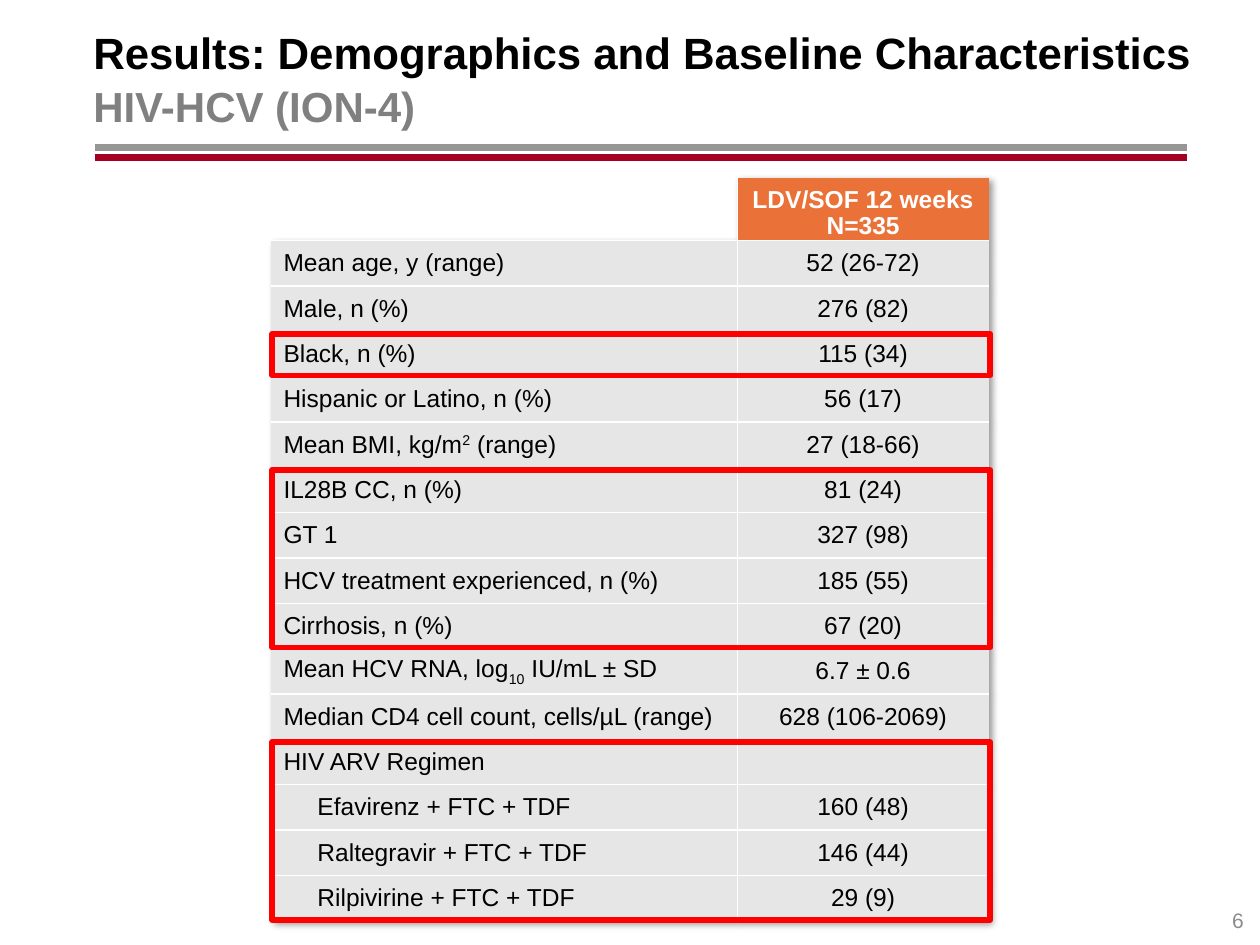
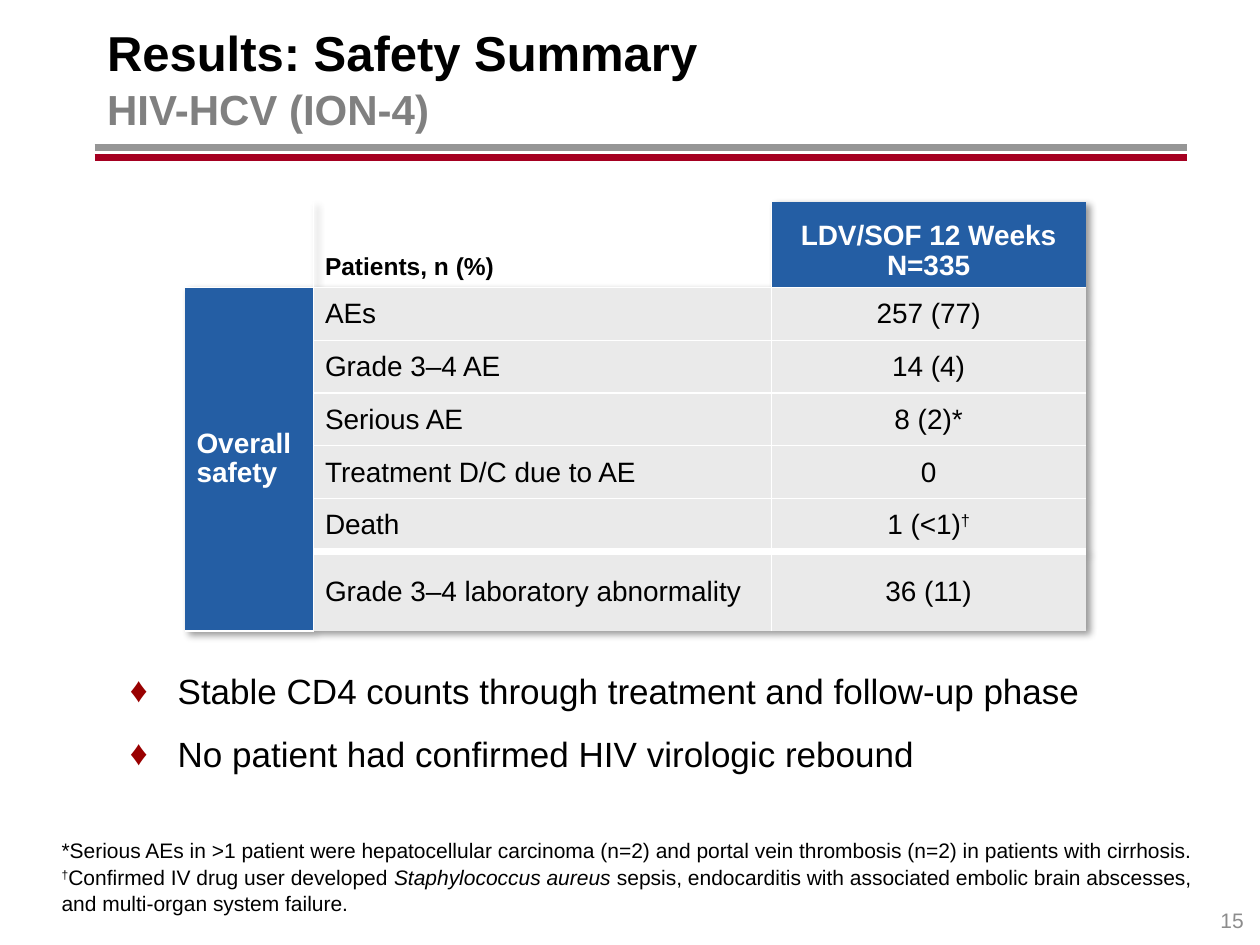
from dataclasses import dataclass

from lxml import etree
from pptx import Presentation
from pptx.dml.color import RGBColor
from pptx.enum.shapes import MSO_CONNECTOR as CONN, MSO_SHAPE as SHAPE
from pptx.enum.text import MSO_ANCHOR as ANCHOR, MSO_AUTO_SIZE as AUTO, PP_ALIGN as ALIGN
from pptx.oxml.ns import qn
from pptx.util import Inches, Pt


@dataclass(frozen=True)
class Theme:
    font: str = "Arial"
    black: str = "000000"
    white: str = "FFFFFF"
    subtitle: str = "808080"
    number: str = "8C8C8C"
    band_gray: str = "969696"
    band_red: str = "A50021"
    bullet: str = "990000"
    highlight: str = "FF0000"
    orange: str = "EA7137"
    blue: str = "245EA4"
    row_gray: str = "E6E6E6"
    row_light: str = "EAEAEA"
    subtitle_size: float = 24
    bullet_size: float = 20
    safety_size: float = 16
    cell_size: float = 14
    note_size: float = 12
    band_width: float = 4.25
    box_width: float = 3.25
    grid_width: float = 0.75
    divider_width: float = 4.5


T = Theme()
NO_GRID_STYLE = "{2D5ABB26-0587-4C30-8999-92F81FD0307C}"
SUBTITLE = "HIV-HCV (ION-4)"
# Text marks: "|" splits runs; a leading ^ raises, _ lowers, ~ slants the run.
BASELINES = {"^": "30000", "_": "-25000"}

DEMOGRAPHICS = [
    ("Mean age, y (range)", "52 (26-72)"),
    ("Male, n (%)", "276 (82)"),
    ("Black, n (%)", "115 (34)"),
    ("Hispanic or Latino, n (%)", "56 (17)"),
    ("Mean BMI, kg/m|^2| (range)", "27 (18-66)"),
    ("IL28B CC, n (%)", "81 (24)"),
    ("GT 1", "327 (98)"),
    ("HCV treatment experienced, n (%)", "185 (55)"),
    ("Cirrhosis, n (%)", "67 (20)"),
    ("Mean HCV RNA, log|_10| IU/mL ± SD", "6.7 ± 0.6"),
    ("Median CD4 cell count, cells/µL (range)", "628 (106-2069)"),
    ("HIV ARV Regimen", ""),
    ("Efavirenz + FTC + TDF", "160 (48)"),
    ("Raltegravir + FTC + TDF", "146 (44)"),
    ("Rilpivirine + FTC + TDF", "29 (9)"),
]
REGIMEN_ROWS = (13, 14, 15)
HIGHLIGHTED_ROWS = [(3, 3), (6, 9), (12, 15)]

SAFETY = [
    ("AEs", "257 (77)"),
    ("Grade 3‒4 AE", "14 (4)"),
    ("Serious AE", "8 (2)*"),
    ("Treatment D/C due to AE", "0"),
    ("Death", "1 (<1)|^†"),
    ("Grade 3‒4 laboratory abnormality", "36 (11)"),
]
FINDINGS = [
    "Stable CD4 counts through treatment and follow-up phase",
    "No patient had confirmed HIV virologic rebound",
]
FOOTNOTES = [
    "*Serious AEs in >1 patient were hepatocellular carcinoma (n=2) and portal "
    "vein thrombosis (n=2) in patients with cirrhosis.",
    "^†|Confirmed IV drug user developed |~Staphylococcus aureus| sepsis, endocarditis "
    "with associated embolic brain abscesses, and multi-organ system failure.",
]


# Text helpers
def rgb(color):
    return RGBColor.from_string(color)


def style_run(r, size, color, bold=False):
    r.font.name = T.font
    r.font.size = Pt(size)
    r.font.bold = bold
    r.font.color.rgb = rgb(color)


def write(tf, lines, size, color=T.black, bold=False, align=ALIGN.LEFT, spacing=None):
    for i, line in enumerate(lines):
        p = tf.add_paragraph() if i else tf.paragraphs[0]
        p.alignment = align
        p.line_spacing = spacing
        for part in line.split("|"):
            mark = part[:1]
            r = p.add_run()
            r.text = part[1:] if mark and mark in "^_~" else part
            style_run(r, size, color, bold)
            if mark in BASELINES:
                r.font._element.set("baseline", BASELINES[mark])
            elif mark == "~":
                r.font.italic = True


def place(sp, box):
    sp.left, sp.top, sp.width, sp.height = (Inches(v) for v in box)


def add_text(slide, box, anchor):
    tf = slide.shapes.add_textbox(*(Inches(v) for v in box)).text_frame
    tf.word_wrap = True
    tf.vertical_anchor = anchor
    return tf


# Table helpers
def set_borders(cell, widths):
    """Draw white borders; widths maps L, R, T, B to points."""
    tcPr = cell._tc.get_or_add_tcPr()
    sides = [side for side in "LRTB" if side in widths]
    for i, side in enumerate(sides):
        ln = etree.Element(qn(f"a:ln{side}"), w=str(Pt(widths[side])))
        fill = etree.SubElement(ln, qn("a:solidFill"))
        etree.SubElement(fill, qn("a:srgbClr"), val=T.white)
        tcPr.insert(i, ln)


def add_shadow(tblPr):
    effects = etree.Element(qn("a:effectLst"))
    shadow = etree.SubElement(effects, qn("a:outerShdw"), blurRad=str(Pt(4)),
                              dist=str(Pt(3)), dir="2700000", algn="tl", rotWithShape="0")
    color = etree.SubElement(shadow, qn("a:prstClr"), val="black")
    etree.SubElement(color, qn("a:alpha"), val="40000")
    tblPr.insert(0, effects)


def add_grid(slide, left, top, cols, rows, divider=None):
    """Add an unfilled table with inner white rules, thick above row `divider`."""
    box = (left, top, sum(cols), sum(rows))
    table = slide.shapes.add_table(len(rows), len(cols), *(Inches(v) for v in box)).table
    table.first_row = table.horz_banding = False
    tblPr = table._tbl.tblPr
    tblPr.find(qn("a:tableStyleId")).text = NO_GRID_STYLE
    add_shadow(tblPr)
    for col, width in zip(table.columns, cols):
        col.width = Inches(width)
    for row, height in zip(table.rows, rows):
        row.height = Inches(height)

    def rule(edge):
        return T.divider_width if edge == divider else T.grid_width

    for r in range(len(rows)):
        for c in range(len(cols)):
            widths = {}
            if c:
                widths["L"] = T.grid_width
            if c < len(cols) - 1:
                widths["R"] = T.grid_width
            if r:
                widths["T"] = rule(r)
            if r < len(rows) - 1:
                widths["B"] = rule(r + 1)
            set_borders(table.cell(r, c), widths)
    return table


def fill_cell(cell, text, size, fill=None, margins=(0.1, 0.01), anchor=ANCHOR.MIDDLE, **look):
    cell.margin_left = cell.margin_right = Inches(margins[0])
    cell.margin_top = cell.margin_bottom = Inches(margins[1])
    cell.vertical_anchor = anchor
    if fill:
        cell.fill.solid()
        cell.fill.fore_color.rgb = rgb(fill)
    if text:
        write(cell.text_frame, text.split("\n"), size, **look)


# Parts shared by the slides
def add_band(slide, y, color):
    line = slide.shapes.add_connector(CONN.STRAIGHT, Inches(0.75), Inches(y),
                                      Inches(9.42), Inches(y))
    line.line.color.rgb = rgb(color)
    line.line.width = Pt(T.band_width)
    etree.SubElement(line._element.spPr, qn("a:effectLst"))


def add_frame(prs, layout, title, title_size, title_box, number):
    slide = prs.slides.add_slide(prs.slide_layouts[layout])
    add_band(slide, 1.17, T.band_gray)
    add_band(slide, 1.25, T.band_red)

    place(slide.shapes.title, title_box)
    tf = slide.shapes.title.text_frame
    tf.text = f"{title}\v{SUBTITLE}"
    tf.auto_size = AUTO.NONE
    tf.vertical_anchor = ANCHOR.MIDDLE
    p = tf.paragraphs[0]
    p.alignment = ALIGN.LEFT
    p.line_spacing = 1.05
    style_run(p.runs[0], title_size, T.black, True)
    style_run(p.runs[1], T.subtitle_size, T.subtitle, True)

    tf = add_text(slide, (7.64, 7.1, 2.33, 0.4), ANCHOR.MIDDLE)
    write(tf, [number], T.note_size, T.number, align=ALIGN.RIGHT)
    return slide


# Demographics slide
def add_demographics_table(slide, left, top):
    cols, head, row = (3.7, 2), 0.5, 0.36
    table = add_grid(slide, left, top, cols, [head] + [row] * len(DEMOGRAPHICS))
    fill_cell(table.cell(0, 1), "LDV/SOF 12 weeks\nN=335", T.cell_size, T.orange,
              (0.05, 0.01), ANCHOR.BOTTOM, color=T.white, bold=True,
              align=ALIGN.CENTER, spacing=0.95)
    for i, (label, value) in enumerate(DEMOGRAPHICS, 1):
        fill_cell(table.cell(i, 0), label, T.cell_size, T.row_gray)
        fill_cell(table.cell(i, 1), value, T.cell_size, T.row_gray, align=ALIGN.CENTER)
    for i in REGIMEN_ROWS:
        table.cell(i, 0).margin_left = Inches(0.37)

    # Red outlines around the key rows
    for first, last in HIGHLIGHTED_ROWS:
        y = top + head + (first - 1) * row + 0.02
        height = (last - first + 1) * row - 0.03
        box = (left + 0.01, y, sum(cols), height)
        sp = slide.shapes.add_shape(SHAPE.RECTANGLE, *(Inches(v) for v in box))
        sp.shadow.inherit = False
        sp.fill.background()
        sp.line.color.rgb = rgb(T.highlight)
        sp.line.width = Pt(T.box_width)


def build_demographics(prs):
    slide = add_frame(prs, 5, "Results: Demographics and Baseline Characteristics",
                      25, (0.64, 0.18, 9.33, 0.86), "6")
    add_demographics_table(slide, 2.15, 1.41)


# Safety slide
def add_safety_table(slide, left, top):
    rows = [0.68] + [0.42] * 5 + [0.63]
    table = add_grid(slide, left, top, (1.02, 3.63, 2.5), rows, divider=6)
    margins = (0.09, 0.05)
    head = dict(margins=margins, anchor=ANCHOR.BOTTOM, bold=True)
    fill_cell(table.cell(0, 1), "Patients, n (%)", T.cell_size, **head)
    fill_cell(table.cell(0, 2), "LDV/SOF 12 Weeks\nN=335", T.safety_size, T.blue,
              color=T.white, align=ALIGN.CENTER, spacing=0.95, **head)
    table.cell(1, 0).merge(table.cell(len(SAFETY), 0))
    fill_cell(table.cell(1, 0), "Overall\nsafety", T.safety_size, T.blue, margins,
              color=T.white, bold=True, spacing=0.95)
    for i, (label, value) in enumerate(SAFETY, 1):
        fill_cell(table.cell(i, 1), label, T.safety_size, T.row_light, margins)
        fill_cell(table.cell(i, 2), value, T.safety_size, T.row_light, margins,
                  align=ALIGN.CENTER)


def fill_findings(sp, box):
    place(sp, box)
    tf = sp.text_frame
    tf.auto_size = AUTO.NONE
    write(tf, FINDINGS, T.bullet_size)
    for p in tf.paragraphs:
        p.space_before = p.space_after = Pt(6)
        pPr = p._p.get_or_add_pPr()
        pPr.set("marL", str(Inches(0.38)))
        pPr.set("indent", str(Inches(-0.38)))
        color = etree.SubElement(pPr, qn("a:buClr"))
        etree.SubElement(color, qn("a:srgbClr"), val=T.bullet)
        etree.SubElement(pPr, qn("a:buFont"), typeface=T.font)
        etree.SubElement(pPr, qn("a:buChar"), char="♦")


def build_safety(prs):
    slide = add_frame(prs, 1, "Results: Safety Summary", 28, (0.75, 0.18, 8.67, 0.86), "15")
    add_safety_table(slide, 1.47, 1.6)
    fill_findings(slide.placeholders[1], (0.93, 5.26, 8.42, 0.96))
    tf = add_text(slide, (0.39, 6.82, 9.31, 0.5), ANCHOR.BOTTOM)
    write(tf, FOOTNOTES, T.note_size, spacing=1.05)


def main():
    prs = Presentation()
    prs.slide_width, prs.slide_height = Inches(10), Inches(7.5)
    build_demographics(prs)
    build_safety(prs)
    prs.save("out.pptx")


if __name__ == "__main__":
    main()
